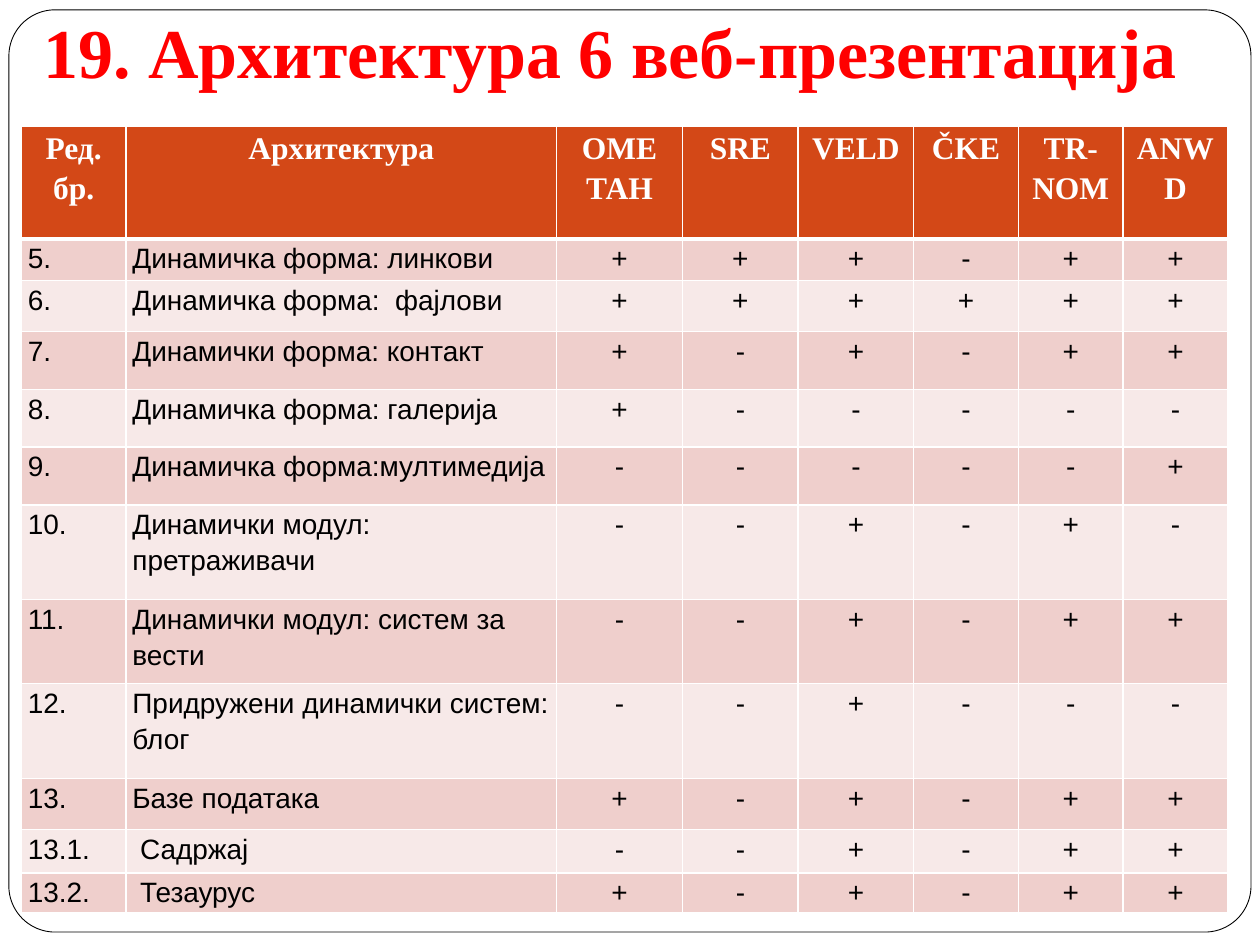
from lxml.etree import SubElement
from pptx import Presentation
from pptx.dml.color import RGBColor
from pptx.enum.shapes import MSO_SHAPE
from pptx.enum.text import MSO_ANCHOR, MSO_AUTO_SIZE, PP_ALIGN
from pptx.oxml.ns import qn
from pptx.util import Cm, Pt

WHITE = RGBColor(0xFF, 0xFF, 0xFF)
BLACK = RGBColor(0, 0, 0)
RED = RGBColor(0xFF, 0, 0)
RUST = RGBColor(0xD3, 0x48, 0x17)
ROSE = RGBColor(0xEF, 0xCF, 0xCC)
PALE = RGBColor(0xF7, 0xE9, 0xE8)

TITLE = "19. Архитектура 6 веб-презентација"
HEADS = ["Ред.\nбр.", "Архитектура", "ОМЕ\nТАН", "SRE", "VELD", "ČKE", "TR-NOM", "ANWD"]
ROWS = [
    ("5.", "Динамичка форма: линкови", "+++-++", 0.84),
    ("6.", "Динамичка форма:  фајлови", "++++++", 1.02),
    ("7.", "Динамички форма: контакт", "+-+-++", 1.17),
    ("8.", "Динамичка форма: галерија", "+-----", 1.16),
    ("9.", "Динамичка форма:мултимедија", "-----+", 1.17),
    ("10.", "Динамички модул: претраживачи", "--+-+-", 1.91),
    ("11.", "Динамички модул: систем за вести", "--+-++", 1.69),
    ("12.", "Придружени динамички систем: блог", "--+---", 1.91),
    ("13.", "Базе података", "+-+-++", 1.03),
    ("13.1.", " Садржај", "--+-++", 0.88),
    ("13.2.", " Тезаурус", "+-+-++", 0.8),
]
WIDTHS = [2.11, 8.68, 2.54, 2.33, 2.33, 2.11, 2.11, 2.11]
HEAD_HIGH = 2.28


def write(frame, text, size=16, font="Arial", color=BLACK, bold=False,
          align=PP_ALIGN.LEFT, space=1.0):
    """Fill a text frame, one paragraph for each line."""
    for num, line in enumerate(text.split("\n")):
        para = frame.paragraphs[0] if num == 0 else frame.add_paragraph()
        para.alignment = align
        para.line_spacing = space
        run = para.add_run()
        run.text = line
        run.font.size, run.font.name, run.font.bold = Pt(size), font, bold
        run.font.color.rgb = color


class Deck:
    """Holds the style and the current slide."""

    serif = "Times New Roman"

    def __init__(self):
        self.file = Presentation()
        self.file.slide_width, self.file.slide_height = Cm(25.4), Cm(19.05)
        self.slide = self.file.slides.add_slide(self.file.slide_layouts[5])

    def frame(self, left, top, width, height):
        """Draw the rounded border behind everything else."""
        box = self.slide.shapes.add_shape(
            MSO_SHAPE.ROUNDED_RECTANGLE, Cm(left), Cm(top), Cm(width), Cm(height))
        box.adjustments[0] = 0.05
        box.shadow.inherit = False
        box.fill.solid()
        box.fill.fore_color.rgb = WHITE
        box.line.color.rgb = BLACK
        box.line.width = Pt(0.5)
        self.slide.shapes.element.insert(2, box.element)

    def title(self, text, left, top, width, height):
        """Place and format the title."""
        head = self.slide.shapes.title
        head.left, head.top, head.width, head.height = map(Cm, (left, top, width, height))
        body = head.text_frame
        body.auto_size = MSO_AUTO_SIZE.NONE
        body.vertical_anchor = MSO_ANCHOR.BOTTOM
        body.margin_left = body.margin_right = body.margin_bottom = Cm(0.25)
        body.margin_top = Cm(0.13)
        write(body, text, size=40, font=self.serif, color=RED, bold=True)

    def edge(self, cell, base):
        """Give a cell white borders."""
        props = cell._tc.get_or_add_tcPr()
        sides = zip(("a:lnL", "a:lnR", "a:lnT", "a:lnB"), (1, 1, 1, base))
        for spot, (side, width) in enumerate(sides):
            line = SubElement(props, qn(side), w=str(Pt(width)))
            fill = SubElement(line, qn("a:solidFill"))
            SubElement(fill, qn("a:srgbClr"), val=str(WHITE))
            props.insert(spot, line)

    def cell(self, cell, text, fill, base=1, **style):
        """Fill one table cell."""
        cell.margin_left = cell.margin_right = Cm(0.13)
        cell.margin_top = cell.margin_bottom = 0
        cell.fill.solid()
        cell.fill.fore_color.rgb = fill
        self.edge(cell, base)
        write(cell.text_frame, text, space=1.15, **style)

    def table(self, left, top):
        """Draw the table of features by site."""
        highs = [HEAD_HIGH] + [row[-1] for row in ROWS]
        grid = self.slide.shapes.add_table(
            len(highs), len(WIDTHS), Cm(left), Cm(top),
            Cm(sum(WIDTHS)), Cm(sum(highs))).table
        for col, width in zip(grid.columns, WIDTHS):
            col.width = Cm(width)
        for row, high in zip(grid.rows, highs):
            row.height = Cm(high)
        for col, text in enumerate(HEADS):
            self.cell(grid.cell(0, col), text, RUST, base=3, size=18,
                      font=self.serif, color=WHITE, bold=True, align=PP_ALIGN.CENTER)
        for num, (mark, name, signs, _) in enumerate(ROWS, 1):
            for col, text in enumerate([mark, name, *signs]):
                self.cell(grid.cell(num, col), text, ROSE if num % 2 else PALE,
                          align=PP_ALIGN.LEFT if col < 2 else PP_ALIGN.CENTER)


def main():
    """Build and save the slide."""
    deck = Deck()
    deck.frame(0.18, 0.2, 25.04, 18.59)
    deck.title(TITLE, 0.63, 0, 23.92, 2.12)
    deck.table(0.43, 2.54)
    deck.file.save("out.pptx")


if __name__ == "__main__":
    main()
